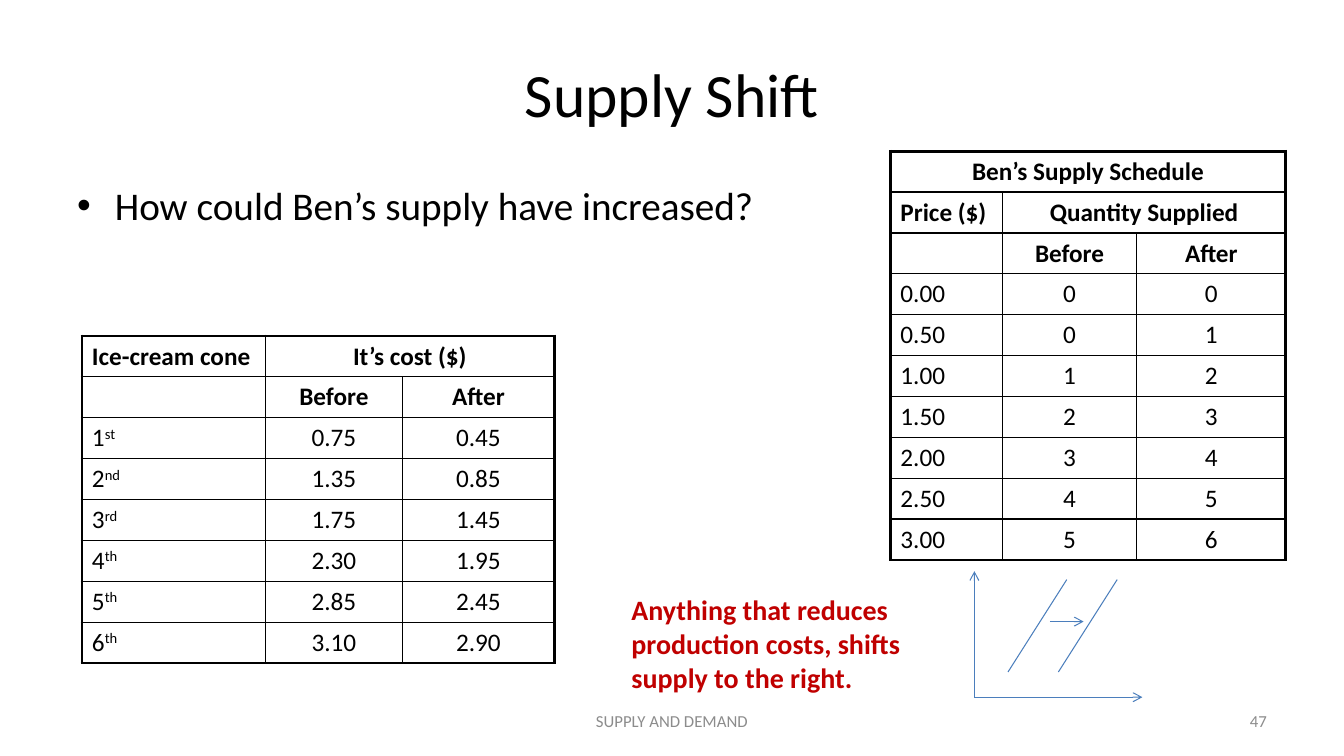
import pptx
import pptx.dml.color
import pptx.enum.shapes
import pptx.enum.text
import pptx.oxml.ns
import pptx.util
from lxml import etree

Pt = pptx.util.Pt
ALIGN = pptx.enum.text.PP_ALIGN
ANCHOR = pptx.enum.text.MSO_ANCHOR
FONT = "Calibri"
BLACK, RED, GREY, BLUE = "000000", "C00000", "8C8C8C", "4B7EBC"
OUTER, INNER = 2.25, 1
ROW_HEIGHT = 29.2

SUPPLY_ROWS = [
    ["Ben’s Supply Schedule", None, None],
    ["Price ($)", "Quantity Supplied", None],
    ["", "Before", "After"],
    ["0.00", "0", "0"],
    ["0.50", "0", "1"],
    ["1.00", "1", "2"],
    ["1.50", "2", "3"],
    ["2.00", "3", "4"],
    ["2.50", "4", "5"],
    ["3.00", "5", "6"],
]
COST_ROWS = [
    ["Ice-cream cone", "It’s cost ($)", None],
    ["", "Before", "After"],
    [("1", "st"), "0.75", "0.45"],
    [("2", "nd"), "1.35", "0.85"],
    [("3", "rd"), "1.75", "1.45"],
    [("4", "th"), "2.30", "1.95"],
    [("5", "th"), "2.85", "2.45"],
    [("6", "th"), "3.10", "2.90"],
]


def color(value):
    return pptx.dml.color.RGBColor.from_string(value)


def add_child(parent, tag, **attributes):
    return etree.SubElement(parent, pptx.oxml.ns.qn(tag), **attributes)


def add_run(paragraph, text, size, fill=BLACK, bold=False, superscript=False):
    run = paragraph.add_run()
    run.text = text
    run.font.name = FONT
    run.font.size = Pt(size)
    run.font.bold = bold
    run.font.color.rgb = color(fill)
    if superscript:
        run._r.get_or_add_rPr().set("baseline", "30000")


def place(shape, left, top, width, height):
    shape.left, shape.top = Pt(left), Pt(top)
    shape.width, shape.height = Pt(width), Pt(height)


def add_title(slide, text):
    title = slide.shapes.title
    place(title, 48, 21.6, 864, 90)
    title.text_frame.vertical_anchor = ANCHOR.MIDDLE
    paragraph = title.text_frame.paragraphs[0]
    paragraph.alignment = ALIGN.CENTER
    add_run(paragraph, text, 44)


def add_text(slide, box, text, size, fill=BLACK, bold=False,
             alignment=ALIGN.LEFT, anchor=ANCHOR.TOP):
    shape = slide.shapes.add_textbox(*(Pt(length) for length in box))
    frame = shape.text_frame
    frame.word_wrap = True
    frame.vertical_anchor = anchor
    paragraph = frame.paragraphs[0]
    paragraph.alignment = alignment
    add_run(paragraph, text, size, fill, bold)
    return paragraph


def add_bullet(paragraph, indent):
    properties = paragraph._p.get_or_add_pPr()
    properties.set("marL", str(Pt(indent)))
    properties.set("indent", str(-Pt(indent)))
    add_child(properties, "a:buFont", typeface="Arial")
    add_child(properties, "a:buChar", char="•")


def set_borders(cell, widths):
    properties = cell._tc.get_or_add_tcPr()
    for side, width in widths.items():
        line = add_child(properties, f"a:ln{side}", w=str(Pt(width)))
        add_child(add_child(line, "a:solidFill"), "a:srgbClr", val=BLACK)


def add_table(slide, left, top, column_widths, rows, header_rows):
    last_row, last_column = len(rows) - 1, len(column_widths) - 1
    table = slide.shapes.add_table(
        len(rows), len(column_widths), Pt(left), Pt(top),
        Pt(sum(column_widths)), Pt(ROW_HEIGHT * len(rows))).table
    table.first_row = table.horz_banding = False
    for column, width in zip(table.columns, column_widths):
        column.width = Pt(width)

    for row_index, values in enumerate(rows):
        table.rows[row_index].height = Pt(ROW_HEIGHT)
        # A row that ends in None has its last filled cell spread to the right
        if values[-1] is None:
            start = values.index(None) - 1
            table.cell(row_index, start).merge(table.cell(row_index, last_column))
        for column_index, value in enumerate(values):
            cell = table.cell(row_index, column_index)
            end = column_index + (cell.span_width if cell.is_merge_origin else 1) - 1
            set_borders(cell, {
                "L": OUTER if column_index == 0 else INNER,
                "R": OUTER if end == last_column else INNER,
                "T": OUTER if row_index == 0 else INNER,
                "B": OUTER if row_index == last_row else INNER,
            })
            cell.fill.background()
            if not value:
                continue
            paragraph = cell.text_frame.paragraphs[0]
            centred = column_index > 0 or cell.span_width > last_column
            paragraph.alignment = ALIGN.CENTER if centred else ALIGN.LEFT
            parts = (value,) if isinstance(value, str) else value
            for position, part in enumerate(parts):
                add_run(paragraph, part, 18, bold=row_index < header_rows,
                        superscript=position > 0)


def add_line(slide, start, end, arrow=None):
    connector = slide.shapes.add_connector(
        pptx.enum.shapes.MSO_CONNECTOR.STRAIGHT,
        *(Pt(length) for length in start + end))
    connector.line.color.rgb = color(BLUE)
    connector.line.width = Pt(0.75)
    if arrow:
        add_child(connector.line._get_or_add_ln(), arrow, type="arrow")
    add_child(connector._element.spPr, "a:effectLst")


def add_supply_graph(slide):
    # Axes
    origin = (696, 498)
    add_line(slide, (696, 408), origin, "a:headEnd")
    add_line(slide, origin, (816, 498), "a:tailEnd")
    # Supply curves before and after
    for left in (720, 756):
        add_line(slide, (left + 42, 414), (left, 480))
    # Shift to the right
    add_line(slide, (750, 444), (774, 444), "a:tailEnd")


def main():
    presentation = pptx.Presentation()
    presentation.slide_width, presentation.slide_height = Pt(960), Pt(540)
    slide = presentation.slides.add_slide(presentation.slide_layouts[5])

    # Title and question
    add_title(slide, "Supply Shift")
    question = add_text(slide, (48, 126, 864, 356.4),
                        "How could Ben’s supply have increased?", 28)
    add_bullet(question, 27)

    # Footer and slide number
    add_text(slide, (328, 500.4, 304, 28.8), "SUPPLY AND DEMAND", 12, GREY,
             alignment=ALIGN.CENTER, anchor=ANCHOR.MIDDLE)
    add_text(slide, (688, 500.4, 224, 28.8), "47", 12, GREY,
             alignment=ALIGN.RIGHT, anchor=ANCHOR.MIDDLE)

    # Tables
    add_table(slide, 636, 108, (80, 96, 106.5), SUPPLY_ROWS, 3)
    add_table(slide, 58.5, 240, (131, 98, 108.5), COST_ROWS, 2)

    # Conclusion and graph
    add_text(slide, (444, 420, 222, 79.2),
             "Anything that reduces production costs, shifts supply to the right.",
             20, RED, bold=True)
    add_supply_graph(slide)

    presentation.save("out.pptx")


if __name__ == "__main__":
    main()
